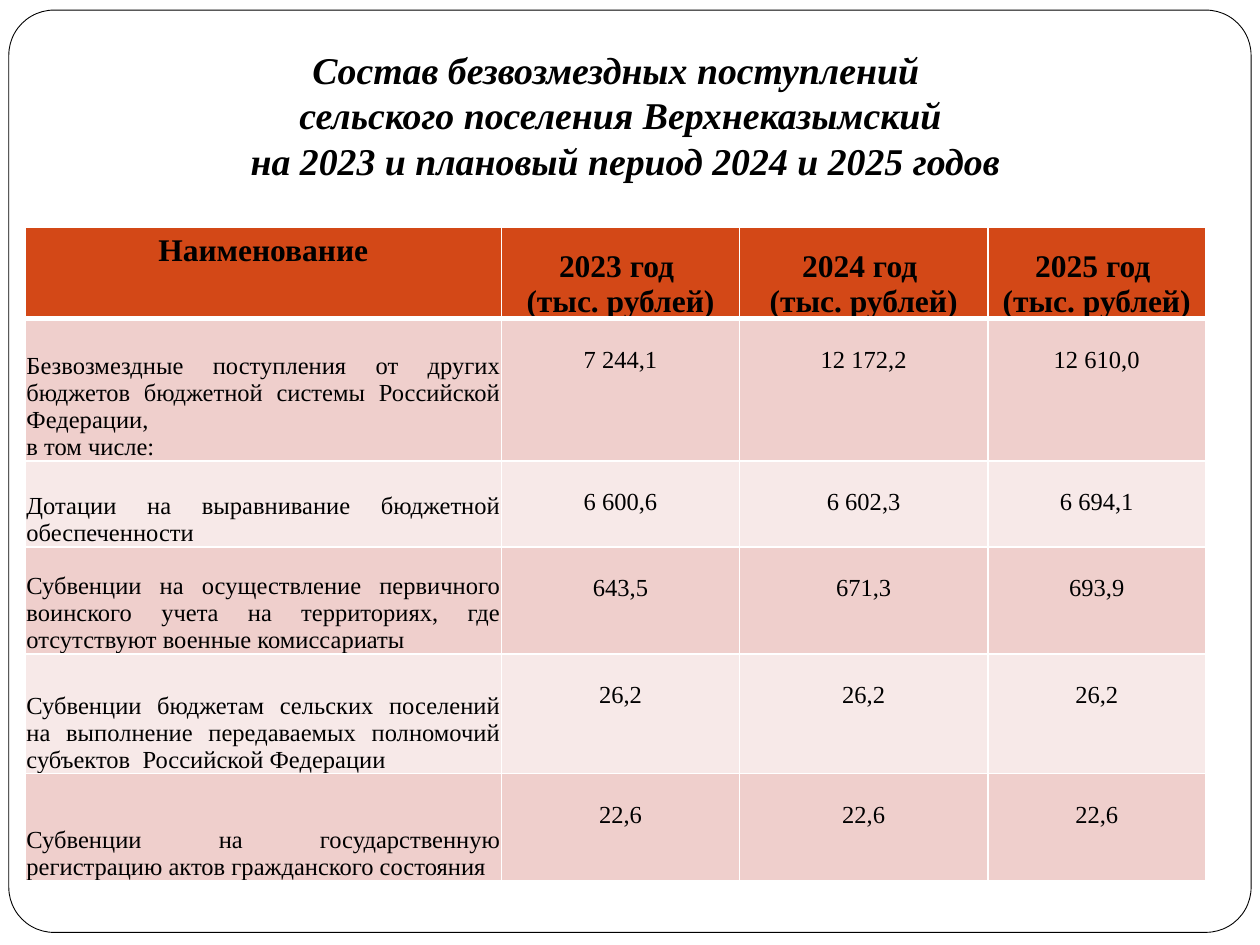
"""Builds a slide with a table of a rural settlement's budget transfers."""
from lxml import etree
from pptx import Presentation
from pptx.dml.color import RGBColor
from pptx.enum.shapes import MSO_SHAPE
from pptx.enum.text import MSO_ANCHOR, PP_ALIGN
from pptx.oxml.ns import qn
from pptx.util import Inches, Pt

ROUNDED = MSO_SHAPE.ROUNDED_RECTANGLE
TOP, BOTTOM = MSO_ANCHOR.TOP, MSO_ANCHOR.BOTTOM
CENTER, JUSTIFY = PP_ALIGN.CENTER, PP_ALIGN.JUSTIFY

BLACK = RGBColor(0x00, 0x00, 0x00)
WHITE = RGBColor(0xFF, 0xFF, 0xFF)
ORANGE = RGBColor(0xD3, 0x48, 0x17)
BANDS = (RGBColor(0xEF, 0xCF, 0xCC), RGBColor(0xF7, 0xE9, 0xE8))

TITLE_FONT = {"size": Pt(21.6), "bold": True, "italic": True}
HEADER_FONT = {"size": Pt(18), "bold": True}
BODY_FONT = {"size": Pt(14), "bold": False}

TITLE = (
    "Состав безвозмездных поступлений \v"
    "сельского поселения Верхнеказымский\v"
    " на 2023 и плановый период 2024 и 2025 годов"
)
YEARS = (2023, 2024, 2025)
TRANSFERS = (
    ("Безвозмездные поступления от других бюджетов бюджетной системы "
     "Российской Федерации,\nв том числе:", "7 244,1", "12 172,2", "12 610,0"),
    ("Дотации на выравнивание бюджетной обеспеченности",
     "6 600,6", "6 602,3", "6 694,1"),
    ("Субвенции на осуществление первичного воинского учета на территориях, "
     "где отсутствуют военные комиссариаты", "643,5", "671,3", "693,9"),
    ("Субвенции бюджетам сельских поселений на выполнение передаваемых "
     "полномочий субъектов  Российской Федерации", "26,2", "26,2", "26,2"),
    ("Субвенции на государственную регистрацию актов гражданского состояния",
     "22,6", "22,6", "22,6"),
)
COLUMN_WIDTHS = (3.78, 1.89, 1.97, 1.73)
ROW_HEIGHTS = (0.73, 1.13, 0.68, 0.85, 0.95, 0.85)

NAME_HEADER = {"margin_left": Inches(0.1), "margin_right": Inches(0.1),
               "margin_top": Inches(0.05), "margin_bottom": Inches(0.05),
               "vertical_anchor": TOP}
TIGHT_BOTTOM = {"margin_left": Inches(0.01), "margin_right": Inches(0.01),
                "margin_top": Inches(0.01), "margin_bottom": 0,
                "vertical_anchor": BOTTOM}
AMOUNT = {**TIGHT_BOTTOM, "margin_top": Inches(0.22), "vertical_anchor": TOP}


def apply(target, values):
    for name, value in values.items():
        setattr(target, name, value)


class BudgetSlide:
    def __init__(self, slide, font_name, text_color):
        self.slide = slide
        self.font_name = font_name
        self.text_color = text_color

    def set_text(self, frame, text, font, align):
        frame.text = text
        frame.word_wrap = True
        for paragraph in frame.paragraphs:
            paragraph.alignment = align
            for run in paragraph.runs:
                apply(run.font, {"name": self.font_name, **font})
                run.font.color.rgb = self.text_color

    def frame(self, left, top, width, height):
        border = self.slide.shapes.add_shape(
            ROUNDED, Inches(left), Inches(top), Inches(width), Inches(height))
        border.shadow.inherit = False
        border.adjustments[0] = 0.049
        border.fill.solid()
        border.fill.fore_color.rgb = WHITE
        border.line.color.rgb = BLACK
        border.line.width = Pt(0.5)

    def title(self, text, left, top, width, height):
        heading = self.slide.shapes.add_textbox(
            Inches(left), Inches(top), Inches(width), Inches(height)).text_frame
        self.set_text(heading, text, TITLE_FONT, CENTER)
        apply(heading, {"vertical_anchor": BOTTOM, "margin_bottom": Inches(0.1)})

    def borders(self, cell, top, bottom):
        properties = cell._tc.get_or_add_tcPr()
        for side, points in (("L", 1), ("R", 1), ("T", top), ("B", bottom)):
            line = etree.SubElement(properties, qn(f"a:ln{side}"), w=str(Pt(points)))
            fill = etree.SubElement(line, qn("a:solidFill"))
            etree.SubElement(fill, qn("a:srgbClr"), val=str(WHITE))

    def cell(self, cell, text, layout, font, align, fill, top=1, bottom=1):
        self.set_text(cell.text_frame, text, font, align)
        apply(cell, layout)
        self.borders(cell, top, bottom)
        cell.fill.solid()
        cell.fill.fore_color.rgb = fill

    def table(self, left, top):
        grid = self.slide.shapes.add_table(
            len(ROW_HEIGHTS), len(COLUMN_WIDTHS), Inches(left), Inches(top),
            Inches(sum(COLUMN_WIDTHS)), Inches(sum(ROW_HEIGHTS))).table
        for column, width in zip(grid.columns, COLUMN_WIDTHS):
            column.width = Inches(width)
        for row, height in zip(grid.rows, ROW_HEIGHTS):
            row.height = Inches(height)

        headers = ["Наименование"] + [f"{year} год \n(тыс. рублей)" for year in YEARS]
        for column, text in enumerate(headers):
            layout = TIGHT_BOTTOM if column else NAME_HEADER
            self.cell(grid.cell(0, column), text, layout, HEADER_FONT, CENTER,
                      ORANGE, bottom=3)
        for row, transfer in enumerate(TRANSFERS, start=1):
            for column, text in enumerate(transfer):
                layout, align = (AMOUNT, CENTER) if column else (TIGHT_BOTTOM, JUSTIFY)
                self.cell(grid.cell(row, column), text, layout, BODY_FONT, align,
                          BANDS[(row - 1) % 2], top=3 if row == 1 else 1)


def main():
    presentation = Presentation()
    apply(presentation, {"slide_width": Inches(10), "slide_height": Inches(7.5)})
    blank = presentation.slide_layouts[6]
    budget = BudgetSlide(presentation.slides.add_slide(blank), "Times New Roman", BLACK)
    budget.frame(0.07, 0.08, 9.86, 7.32)
    budget.title(TITLE, 0.2, 0.21, 9.45, 1.34)
    budget.table(0.2, 1.8)
    presentation.save("out.pptx")


if __name__ == "__main__":
    main()
